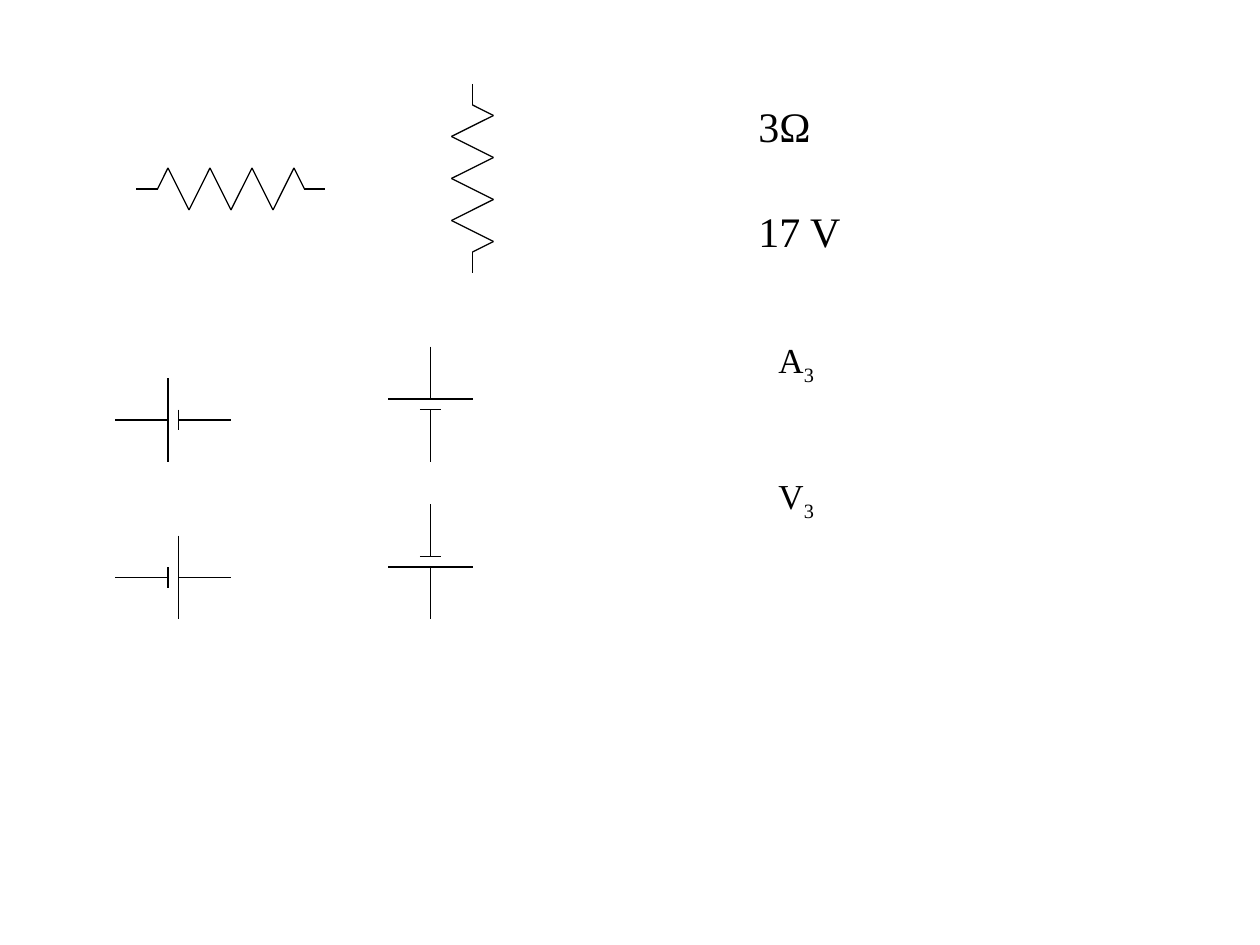
from itertools import pairwise
from pptx import Presentation
from pptx.dml.color import RGBColor
from pptx.enum import shapes, text
from pptx.oxml.ns import qn
from pptx.util import Inches, Pt
from lxml import etree

INK = "000000"
GRID = 12  # grid steps per inch

deck = Presentation()
deck.slide_width, deck.slide_height = Inches(10), Inches(7.5)
slide = deck.slides.add_slide(deck.slide_layouts[6])


def color(code):
    return RGBColor.from_string(code)


def draw(start, upright, a, b):
    """Line between two (along, across) grid points of a symbol."""
    ends = []
    for along, across in (a, b):
        step = (across, along) if upright else (along, across)
        ends += [Inches((s + d) / GRID) for s, d in zip(start, step)]
    wire = slide.shapes.add_connector(shapes.MSO_CONNECTOR.STRAIGHT, *ends)
    wire.line.color.rgb = color(INK)
    wire.line.width = Pt(0.75)
    etree.SubElement(wire._element.spPr, qn("a:effectLst"))


# Resistors: leads at both ends, seven zigzag peaks between
for start, upright, side in [((13, 18), False, -2), ((45, 8), True, 2)]:
    peaks = [(3 + 2 * i, side * (-1) ** i) for i in range(7)]
    points = [(0, 0), (2, 0), *peaks, (16, 0), (18, 0)]
    for a, b in pairwise(points):
        draw(start, upright, a, b)

# Cells: two leads and two plates, given by their half lengths
cells = [
    ((11, 40), False, 4, 1),
    ((11, 55), False, 1, 4),
    ((41, 33), True, 4, 1),
    ((41, 48), True, 1, 4),
]
for start, upright, first, last in cells:
    draw(start, upright, (0, 0), (5, 0))
    draw(start, upright, (5, -first), (5, first))
    draw(start, upright, (6, -last), (6, last))
    draw(start, upright, (6, 0), (11, 0))

# Labels: place, size, main text and subscript
labels = [
    (5.92, 0.75, 0.62, 0.5, 24, "3Ω", ""),
    (5.92, 1.58, 0.86, 0.5, 24, "17 V", ""),
    (6.08, 2.64, 0.49, 0.43, 20, "A", "3"),
    (6.08, 3.72, 0.49, 0.43, 20, "V", "3"),
]
for x, y, w, h, size, main, sub in labels:
    box = slide.shapes.add_textbox(Inches(x), Inches(y), Inches(w), Inches(h))
    frame = box.text_frame
    frame.word_wrap = False
    frame.auto_size = text.MSO_AUTO_SIZE.SHAPE_TO_FIT_TEXT
    for part, base in [(main, 0), (sub, -25000)]:
        if not part:
            continue
        run = frame.paragraphs[0].add_run()
        run.text = part
        run.font.name = "Times New Roman"
        run.font.size = Pt(size)
        run.font.color.rgb = color(INK)
        if base:
            run.font._element.set("baseline", str(base))

deck.save("out.pptx")
